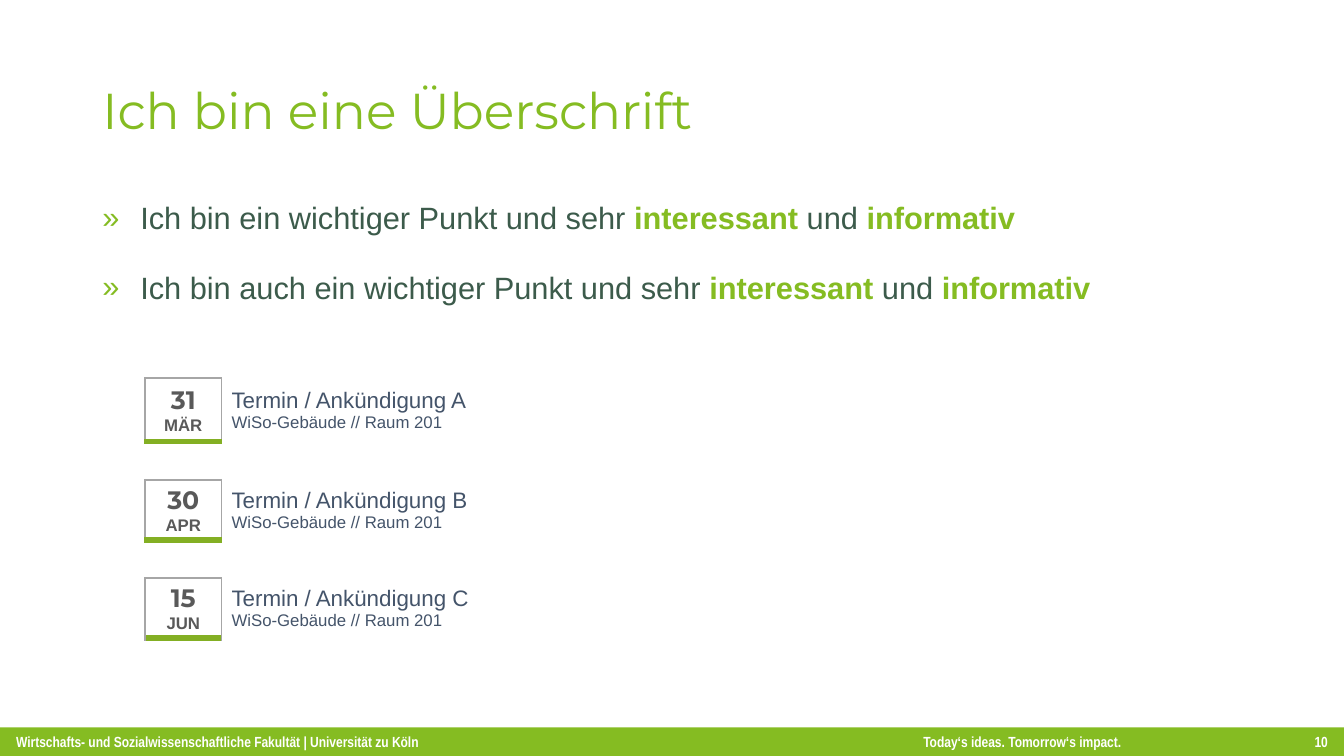
"""Build a slide with a bullet list and three dated announcements."""
import pptx
import pptx.dml.color
import pptx.enum.shapes
import pptx.enum.text
import pptx.oxml.ns
import pptx.util
from lxml import etree

Pt = pptx.util.Pt
ALIGN = pptx.enum.text.PP_ALIGN
MIDDLE = pptx.enum.text.MSO_ANCHOR.MIDDLE
NO_TABLE_STYLE = "{2D5ABB26-0587-4C30-8999-92F81FD0307C}"


def color(value):
    return pptx.dml.color.RGBColor.from_string(value)


def add_xml(parent, tag, **attributes):
    element = etree.SubElement(parent, pptx.oxml.ns.qn(tag))
    for name, value in attributes.items():
        element.set(name, str(value))
    return element


class SlideBuilder:
    GREEN, DARK_GREEN, LINE_GREEN = "85BC22", "3C5B4B", "83AF23"
    GRAY, LINE_GRAY, BLUE, WHITE = "595959", "A6A6A6", "44546A", "FFFFFF"
    HEADING, BODY, FOOTER = "Montserrat", "Arial", "Arial Narrow"

    def __init__(self, presentation):
        self.slide = presentation.slides.add_slide(presentation.slide_layouts[1])

    def style(self, font, name, size, value, bold=False):
        font.name, font.size, font.bold = name, Pt(size), bold
        font.color.rgb = color(value)

    def place(self, shape, left, top, width, height):
        shape.left, shape.top = Pt(left), Pt(top)
        shape.width, shape.height = Pt(width), Pt(height)

    def title(self, text, *box):
        shape = self.slide.shapes.title
        self.place(shape, *box)
        frame = shape.text_frame
        frame.text = text
        frame.auto_size = pptx.enum.text.MSO_AUTO_SIZE.NONE
        frame.vertical_anchor = MIDDLE
        paragraph = frame.paragraphs[0]
        paragraph.alignment = ALIGN.LEFT
        paragraph.line_spacing = 0.9
        self.style(paragraph.font, self.HEADING, 36, self.GREEN)

    def bullets(self, items, *box):
        shape = self.slide.placeholders[1]
        self.place(shape, *box)
        frame = shape.text_frame
        frame.auto_size = pptx.enum.text.MSO_AUTO_SIZE.NONE
        for index, parts in enumerate(items):
            paragraph = frame.add_paragraph() if index else frame.paragraphs[0]
            properties = paragraph._p.get_or_add_pPr()
            properties.set("marL", str(Pt(27)))
            properties.set("indent", str(-Pt(27)))
            bullet_color = add_xml(properties, "a:buClr")
            add_xml(bullet_color, "a:srgbClr", val=self.GREEN)
            add_xml(properties, "a:buFont", typeface=self.BODY)
            add_xml(properties, "a:buChar", char="»")
            paragraph.line_spacing = 1.5
            paragraph.space_before = Pt(10 if index else 0)
            for position, text in enumerate(parts):
                run = paragraph.add_run()
                run.text = text
                strong = position % 2 == 1
                self.style(run.font, self.BODY, 22,
                           self.GREEN if strong else self.DARK_GREEN, strong)

    def border(self, cell, **sides):
        properties = cell._tc.get_or_add_tcPr()
        for tag in ("lnL", "lnR", "lnT", "lnB"):
            if tag in sides:
                value, width = sides[tag]
                line = add_xml(properties, "a:" + tag, w=Pt(width))
                add_xml(add_xml(line, "a:solidFill"), "a:srgbClr", val=value)

    def fill_cell(self, cell, lines, alignment):
        cell.vertical_anchor = MIDDLE
        cell.text = "\n".join(text for text, *_ in lines)
        for paragraph, (_, *font) in zip(cell.text_frame.paragraphs, lines):
            paragraph.alignment = alignment
            self.style(paragraph.font, *font)

    def dates(self, events, left, top, columns, heights, gap):
        count = 2 * len(events) - 1
        frame = self.slide.shapes.add_table(
            count, 2, Pt(left), Pt(top), Pt(sum(columns)),
            Pt(sum(heights) + gap * (len(events) - 1)))
        table = frame.table
        table.first_row = table.horz_banding = False
        table._tbl.tblPr.find(pptx.oxml.ns.qn("a:tableStyleId")).text = NO_TABLE_STYLE
        for column, width in zip(table.columns, columns):
            column.width = Pt(width)
        gray, green = (self.LINE_GRAY, 1.5), (self.LINE_GREEN, 4.5)
        for index in range(count):
            date, details = table.cell(index, 0), table.cell(index, 1)
            if index % 2:
                table.rows[index].height = Pt(gap)
                for cell in (date, details):
                    cell.margin_top = cell.margin_bottom = 0
                self.border(date, lnT=green, lnB=gray)
            else:
                day, month, name, room = events[index // 2]
                table.rows[index].height = Pt(heights[index // 2])
                self.fill_cell(date, [(day, self.HEADING, 18, self.GRAY, True),
                                      (month, self.BODY, 12, self.GRAY, True)], ALIGN.CENTER)
                self.fill_cell(details, [(name, self.BODY, 16, self.BLUE),
                                         (room, self.BODY, 12, self.BLUE)], ALIGN.LEFT)
                self.border(date, lnL=gray, lnR=gray, lnT=gray, lnB=green)
                self.border(details, lnL=gray)
            for cell in (date, details):
                cell.fill.background()

    def footer_text(self, shape, text, alignment, tab=None):
        frame = shape.text_frame
        frame.word_wrap = True
        frame.vertical_anchor = MIDDLE
        frame.margin_left = frame.margin_right = Pt(11.5)
        frame.margin_top = frame.margin_bottom = 0
        paragraph = frame.paragraphs[0]
        paragraph.text = text
        paragraph.alignment = alignment
        if tab:
            tabs = add_xml(paragraph._p.get_or_add_pPr(), "a:tabLst")
            add_xml(tabs, "a:tab", pos=Pt(tab), algn="l")
        self.style(paragraph.font, self.FOOTER, 10.5, self.WHITE, True)

    def footer(self, text, tab, number, top, width, height):
        bar = self.slide.shapes.add_shape(
            pptx.enum.shapes.MSO_SHAPE.RECTANGLE, 0, Pt(top), Pt(width), Pt(height))
        bar.shadow.inherit = False
        bar.fill.solid()
        bar.fill.fore_color.rgb = color(self.GREEN)
        bar.line.fill.background()
        self.footer_text(bar, text, ALIGN.LEFT, tab)
        box = self.slide.shapes.add_textbox(Pt(width - 42), Pt(top), Pt(42), Pt(height))
        self.footer_text(box, number, ALIGN.RIGHT)


def main():
    presentation = pptx.Presentation()
    presentation.slide_width, presentation.slide_height = Pt(960), Pt(540)
    builder = SlideBuilder(presentation)
    builder.title("Ich bin eine Überschrift", 66, 28.75, 828, 104.4)
    builder.bullets([
        (start + " ein wichtiger Punkt und sehr ", "interessant", " und ", "informativ")
        for start in ("Ich bin", "Ich bin auch")
    ], 66, 125.3, 828, 360.5)
    room = "WiSo-Gebäude // Raum 201"
    builder.dates([
        ("31", "MÄR", "Termin / Ankündigung A", room),
        ("30", "APR", "Termin / Ankündigung B", room),
        ("15", "JUN", "Termin / Ankündigung C", room),
    ], 103.7, 270, (54.5, 562.5), (45.5, 43, 43), 27.2)
    builder.footer(
        "Wirtschafts- und Sozialwissenschaftliche Fakultät | Universität zu Köln"
        "\tToday‘s ideas. Tomorrow‘s impact.", 648, "10", 519.6, 960, 20.4)
    presentation.save("out.pptx")


if __name__ == "__main__":
    main()
